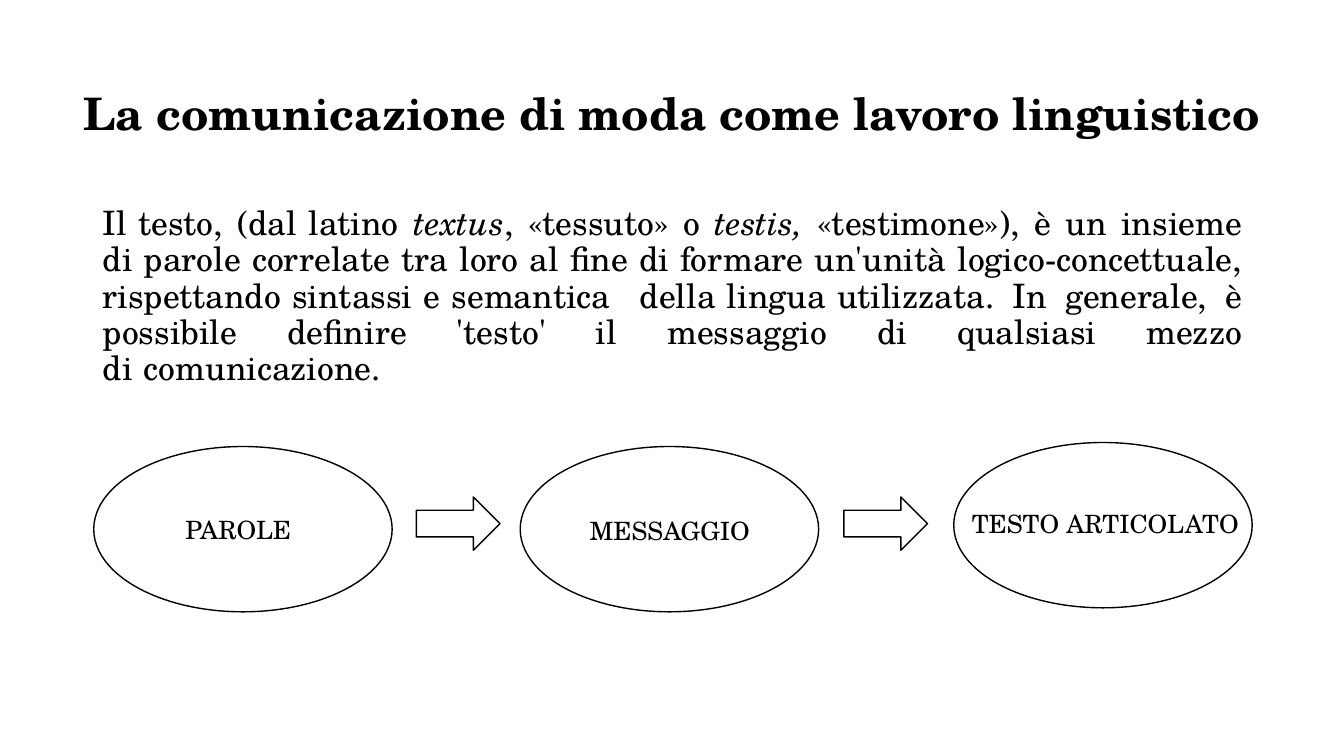
from lxml import etree
from pptx import Presentation
from pptx.dml.color import RGBColor
from pptx.enum.shapes import MSO_SHAPE
from pptx.enum.text import MSO_ANCHOR, MSO_AUTO_SIZE, PP_ALIGN
from pptx.oxml.ns import qn
from pptx.util import Inches, Pt

OVAL, ARROW = MSO_SHAPE.OVAL, MSO_SHAPE.RIGHT_ARROW
TOP, MIDDLE = MSO_ANCHOR.TOP, MSO_ANCHOR.MIDDLE
CENTER, JUSTIFY = PP_ALIGN.CENTER, PP_ALIGN.JUSTIFY
FIXED, GROW = MSO_AUTO_SIZE.NONE, MSO_AUTO_SIZE.SHAPE_TO_FIT_TEXT
BLACK = RGBColor(0, 0, 0)
FONT = "TeX Gyre Schola"
HARD = chr(160)

TITLE = "La comunicazione di moda come lavoro linguistico"
BODY = [
    ("Il~testo, (dal~latino ", False),
    ("textus", True),
    (", «tessuto» o ", False),
    ("testis, ", True),
    ("«testimone»), è un insieme di~parole~correlate tra loro al fine di "
     "formare un'unità logico-concettuale, rispettando~sintassi~e~semantica "
     "~della~lingua~utilizzata. In generale, è possibile definire 'testo' il "
     "messaggio di qualsiasi mezzo di~comunicazione.", False),
]
OVALS = [(0.93, 4.43), (5.16, 4.43), (9.46, 4.39)]
LABELS = [("PAROLE", 1.74, 5.05, 1.33), ("MESSAGGIO", 5.75, 5.06, 1.85),
          ("TESTO ARTICOLATO", 9.54, 4.99, 2.88)]
ARROWS = [4.13, 8.37]


def style(run, size, bold=False, italic=False):
    font = run.font
    font.name, font.size = FONT, Pt(size)
    font.bold, font.italic = bold, italic
    font.color.rgb = BLACK


def place(holder, box, anchor, align):
    holder.left, holder.top, holder.width, holder.height = map(Inches, box)
    frame = holder.text_frame
    frame.auto_size, frame.vertical_anchor = FIXED, anchor
    para = frame.paragraphs[0]
    para.alignment, para.line_spacing = align, 0.9
    return para


def outline(kind, *box):
    shape = slide.shapes.add_shape(kind, *map(Inches, box))
    shape.shadow.inherit = False
    shape.fill.background()
    shape.line.color.rgb = BLACK
    shape.line.width = Pt(1)


deck = Presentation()
deck.slide_width, deck.slide_height = Inches(13.33), Inches(7.5)
slide = deck.slides.add_slide(deck.slide_layouts[1])
title, body = slide.placeholders

para = place(title, (0.56, 0.43, 12.22, 1.45), MIDDLE, CENTER)
para.text = TITLE
style(para.runs[0], 32, bold=True)

para = place(body, (0.92, 2, 11.5, 4.76), TOP, JUSTIFY)
para.space_before = Pt(10)
props = para._p.get_or_add_pPr()
props.set("marL", "0")
props.set("indent", "0")
etree.SubElement(props, qn("a:buNone"))
for text, italic in BODY:
    run = para.add_run()
    run.text = text.replace("~", HARD)
    style(run, 24, italic=italic)

for left, top in OVALS:
    outline(OVAL, left, top, 2.96, 1.64)

for label, left, top, width in LABELS:
    box = slide.shapes.add_textbox(*map(Inches, (left, top, width, 0.4)))
    frame = box.text_frame
    frame.word_wrap, frame.auto_size = True, GROW
    frame.text = label
    style(frame.paragraphs[0].runs[0], 18)

for left in ARROWS:
    outline(ARROW, left, 4.93, 0.83, 0.53)

deck.save("out.pptx")
